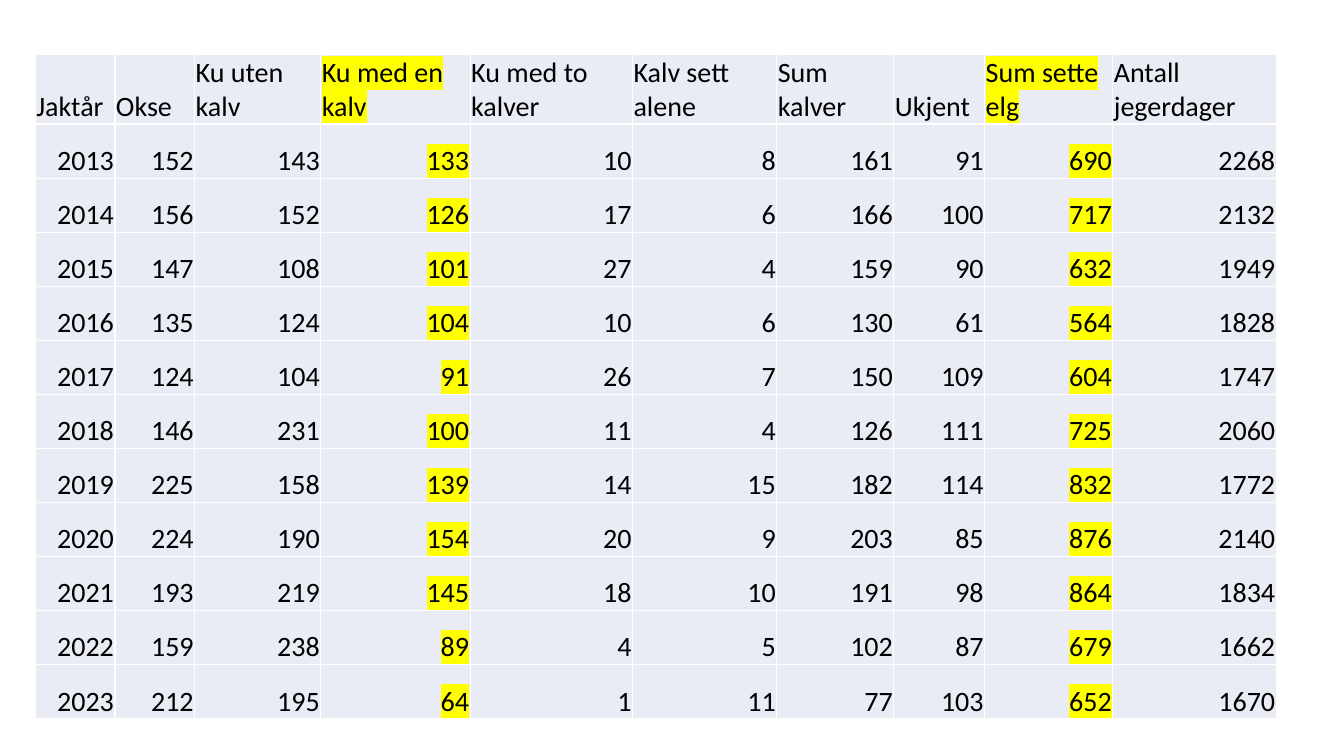
from lxml import etree
from pptx import Presentation
from pptx import util as u
from pptx.dml.color import RGBColor
from pptx.enum import text
from pptx.oxml.ns import qn

HEADERS = ["Jaktår", "Okse", "Ku uten kalv", "Ku med en kalv", "Ku med to kalver",
           "Kalv sett alene", "Sum kalver", "Ukjent", "Sum sette elg", "Antall jegerdager"]
SIGHTINGS = [
    (2013, 152, 143, 133, 10, 8, 161, 91, 690, 2268),
    (2014, 156, 152, 126, 17, 6, 166, 100, 717, 2132),
    (2015, 147, 108, 101, 27, 4, 159, 90, 632, 1949),
    (2016, 135, 124, 104, 10, 6, 130, 61, 564, 1828),
    (2017, 124, 104, 91, 26, 7, 150, 109, 604, 1747),
    (2018, 146, 231, 100, 11, 4, 126, 111, 725, 2060),
    (2019, 225, 158, 139, 14, 15, 182, 114, 832, 1772),
    (2020, 224, 190, 154, 20, 9, 203, 85, 876, 2140),
    (2021, 193, 219, 145, 18, 10, 191, 98, 864, 1834),
    (2022, 159, 238, 89, 4, 5, 102, 87, 679, 1662),
    (2023, 212, 195, 64, 1, 11, 77, 103, 652, 1670),
]
COL_WIDTHS = [0.79, 0.79, 1.25, 1.48, 1.61, 1.43, 1.16, 0.9, 1.27, 1.62]
HEADER_HEIGHT = 0.68
MARKED = {"Ku med en kalv", "Sum sette elg"}
CELL, BORDER, INK, MARKER = "E9EBF5", "FFFFFF", "000000", "FFFF00"


def rgb(hex_color):
    return RGBColor.from_string(hex_color)


def add_solid(parent, hex_color):
    fill = etree.SubElement(parent, qn("a:solidFill"))
    etree.SubElement(fill, qn("a:srgbClr"), val=hex_color)


def add_borders(cell):
    tc_pr = cell._tc.get_or_add_tcPr()
    for i, side in enumerate(("lnL", "lnR", "lnT", "lnB")):
        ln = etree.Element(qn("a:" + side), w=str(u.Pt(1)))
        add_solid(ln, BORDER)
        tc_pr.insert(i, ln)


def highlight(r):
    mark = etree.Element(qn("a:highlight"))
    etree.SubElement(mark, qn("a:srgbClr"), val=MARKER)
    r.font._element.find(qn("a:solidFill")).addnext(mark)


def format_cell(cell, value, align, marked):
    cell.fill.solid()
    cell.fill.fore_color.rgb = rgb(CELL)
    add_borders(cell)
    cell.vertical_anchor = text.MSO_ANCHOR.BOTTOM
    cell.margin_left = cell.margin_right = cell.margin_top = u.Inches(0.01)
    cell.margin_bottom = 0
    p = cell.text_frame.paragraphs[0]
    p.text = str(value)
    p.alignment = align
    r = p.runs[0]
    r.font.size = u.Pt(20)
    r.font.name = "Calibri"
    r.font.color.rgb = rgb(INK)
    if marked:
        highlight(r)


def add_sightings_table(slide, left, top, width, height):
    rows = [HEADERS] + SIGHTINGS
    box = [u.Inches(v) for v in (left, top, width, height)]
    table = slide.shapes.add_table(len(rows), len(HEADERS), *box).table
    table.first_row = table.horz_banding = False

    # Columns share the width; the years share what the header leaves
    for col, share in zip(table.columns, COL_WIDTHS):
        col.width = u.Inches(width * share / sum(COL_WIDTHS))
    for i, row in enumerate(table.rows):
        year_height = (height - HEADER_HEIGHT) / len(SIGHTINGS)
        row.height = u.Inches(year_height if i else HEADER_HEIGHT)

    # Headers to the left, numbers to the right
    for i, values in enumerate(rows):
        align = text.PP_ALIGN.RIGHT if i else text.PP_ALIGN.LEFT
        for j, value in enumerate(values):
            format_cell(table.cell(i, j), value, align, HEADERS[j] in MARKED)


def main():
    prs = Presentation()
    prs.slide_width, prs.slide_height = u.Inches(13.33), u.Inches(7.5)
    slide = prs.slides.add_slide(prs.slide_layouts[6])
    add_sightings_table(slide, 0.35, 0.54, 12.31, 6.58)
    prs.save("out.pptx")


if __name__ == "__main__":
    main()
